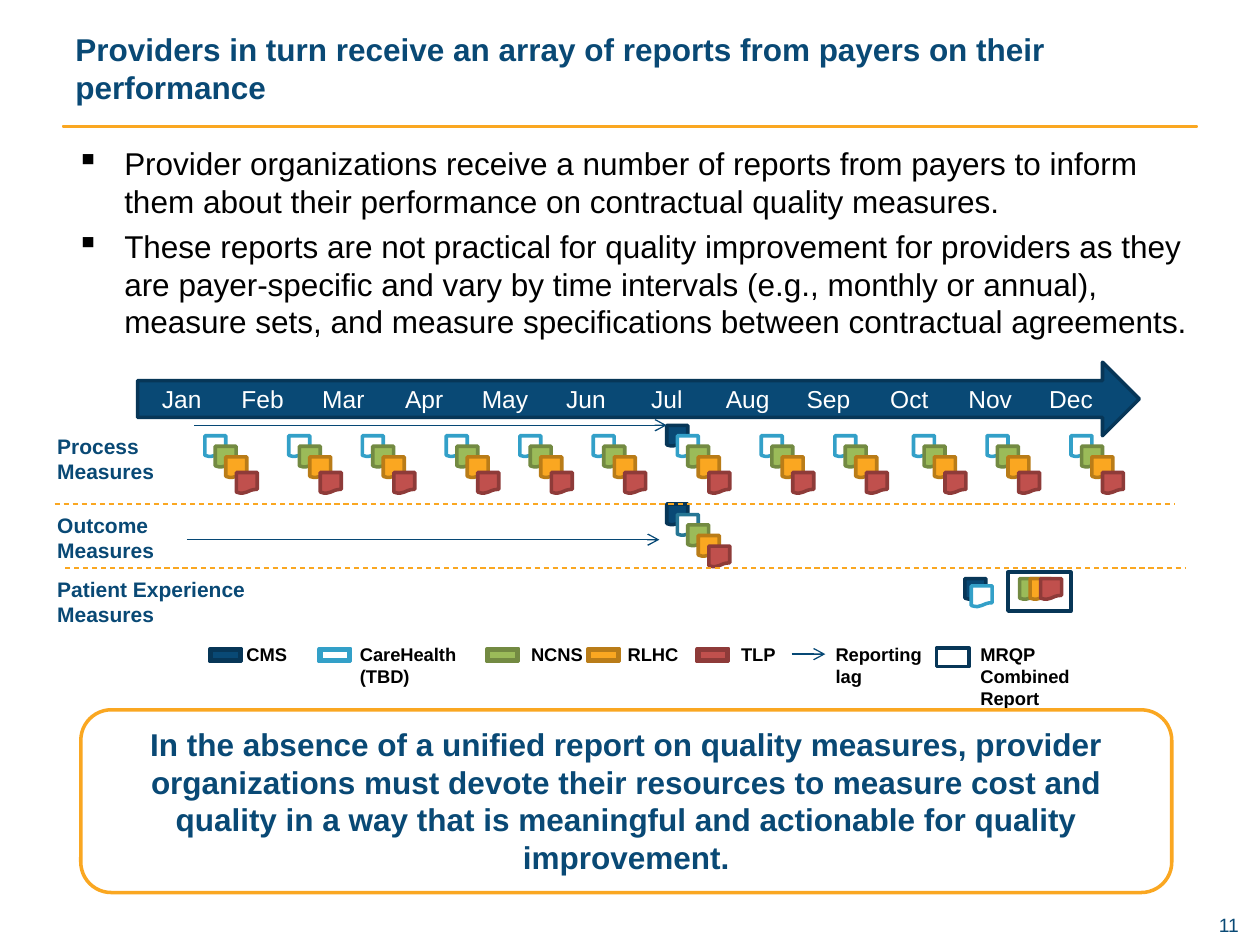
from dataclasses import dataclass

from lxml.etree import SubElement
from pptx import Presentation
from pptx.dml.color import RGBColor
from pptx.enum.dml import MSO_LINE
from pptx.enum.shapes import MSO_CONNECTOR, MSO_SHAPE as SHAPE
from pptx.enum.text import MSO_ANCHOR as ANCHOR, PP_ALIGN as ALIGN
from pptx.oxml.ns import qn
from pptx.util import Inches, Pt

CELL = Inches(1) // 12  # the slide is a grid of 120 columns and 90 rows
COLUMNS, ROWS = 120, 90

NAVY = RGBColor(0x09, 0x49, 0x75)
DARK_NAVY = RGBColor(0x07, 0x36, 0x57)
LAG_BLUE = RGBColor(0x06, 0x48, 0x75)
SKY = RGBColor(0x33, 0xA0, 0xC8)
DARK_SKY = RGBColor(0x26, 0x76, 0x94)
GREEN = RGBColor(0x9B, 0xBB, 0x59)
DARK_GREEN = RGBColor(0x73, 0x8A, 0x42)
AMBER = RGBColor(0xFA, 0xA7, 0x21)
DARK_AMBER = RGBColor(0xB9, 0x7C, 0x18)
RED = RGBColor(0xC0, 0x50, 0x4D)
DARK_RED = RGBColor(0x8E, 0x3B, 0x39)
WHITE = RGBColor(0xFF, 0xFF, 0xFF)
BLACK = RGBColor(0, 0, 0)

# Fill and outline of each payer's report
CMS = (NAVY, DARK_NAVY)
STATE = (WHITE, SKY)
STATE_OUTCOME = (WHITE, DARK_SKY)
BLUE_PLAN = (GREEN, DARK_GREEN)
CARE_PLAN = (AMBER, DARK_AMBER)
HEALTH_PLAN = (RED, DARK_RED)

MONTHS = "Jan Feb Mar Apr May Jun Jul Aug Sep Oct Nov Dec".split()
MONTHLY_REPORTS = [15.5, 23.5, 30.5, 38.5, 45.5, 52.5, 60.5, 68.5, 75.5, 83, 90, 98]


@dataclass
class Box:
    """An area in grid cells."""
    left: float
    top: float
    width: float
    height: float

    def inner(self, x, y, width, height):
        return Box(self.left + x, self.top + y, width, height)

    def emu(self):
        return [round(n * CELL) for n in (self.left, self.top, self.width, self.height)]


def write(shape, lines, size=18, color=NAVY, bold=False, align=ALIGN.LEFT,
          anchor=ANCHOR.TOP, inset=None, bullet=None, before=0, tabs=()):
    frame = shape.text_frame
    frame.word_wrap = True
    frame.vertical_anchor = anchor
    if inset is not None:
        frame.margin_left = frame.margin_right = inset
        frame.margin_top = frame.margin_bottom = inset
    for index, line in enumerate(lines):
        paragraph = frame.add_paragraph() if index else frame.paragraphs[0]
        props = paragraph._p.get_or_add_pPr()
        if bullet:
            props.set("marL", str(Inches(0.38)))
            props.set("indent", str(-Inches(0.38)))
            SubElement(props, qn("a:buChar")).set("char", bullet)
        if tabs:
            stops = SubElement(props, qn("a:tabLst"))
            for position in tabs:
                stop = SubElement(stops, qn("a:tab"))
                stop.set("pos", str(round(position * CELL)))
                stop.set("algn", "ctr")
        paragraph.alignment = align
        if index and before:
            paragraph.space_before = Pt(before)
        run = paragraph.add_run()
        run.text = line
        run.font.name, run.font.size = "Arial", Pt(size)
        run.font.bold, run.font.color.rgb = bold, color


def text(slide, box, *lines, **style):
    write(slide.shapes.add_textbox(*box.emu()), lines, **style)


def shape(slide, kind, box, fill=None, line=None, weight=2):
    item = slide.shapes.add_shape(kind, *box.emu())
    item.shadow.inherit = False
    if fill is None:
        item.fill.background()
    else:
        item.fill.solid()
        item.fill.fore_color.rgb = fill
    if line is None:
        item.line.fill.background()
    else:
        item.line.color.rgb = line
        item.line.width = Pt(weight)
    return item


def rule(slide, box, color, dashed=False, arrow=False):
    """Horizontal line along the top of the box."""
    left, top, width, _ = box.emu()
    line = slide.shapes.add_connector(MSO_CONNECTOR.STRAIGHT, left, top, left + width, top)
    line.line.color.rgb = color
    line.line.width = Pt(0.75)
    if dashed:
        line.line.dash_style = MSO_LINE.DASH
    if arrow:
        SubElement(line.line._get_or_add_ln(), qn("a:tailEnd")).set("type", "arrow")
    SubElement(line._element.spPr, qn("a:effectLst"))


def reports(slide, area, placed):
    for payer, x, y in placed:
        shape(slide, SHAPE.FLOWCHART_DOCUMENT, area.inner(x, y, 2, 2), *payer)


def row_label(slide, box, *lines):
    write(shape(slide, SHAPE.ROUNDED_RECTANGLE, box, WHITE), lines,
          size=12, bold=True, anchor=ANCHOR.MIDDLE)


def header(slide, area):
    text(slide, area.inner(0, 0, area.width, 9),
         "Providers in turn receive an array of reports from payers on their performance",
         bold=True, anchor=ANCHOR.MIDDLE)
    shape(slide, SHAPE.RECTANGLE, area.inner(0, 10, area.width, 0.12), AMBER, AMBER, 1)


def findings(slide, area):
    text(slide, area,
         "Provider organizations receive a number of reports from payers to inform them "
         "about their performance on contractual quality measures.",
         "These reports are not practical for quality improvement for providers as they are "
         "payer-specific and vary by time intervals (e.g., monthly or annual), measure sets, "
         "and measure specifications between contractual agreements.",
         color=BLACK, bullet="▪", before=4.3)


def month_arrow(slide, box):
    arrow = shape(slide, SHAPE.RIGHT_ARROW, box, NAVY, DARK_NAVY)
    write(arrow, ["".join("\t" + month for month in MONTHS)], size=14, color=WHITE,
          anchor=ANCHOR.MIDDLE, inset=0, tabs=[4.2 + 7.7 * i for i in range(len(MONTHS))])


def process_row(slide, area):
    row_label(slide, area.inner(0, 0.4, 14.5, 5.6), "Process Measures")
    reports(slide, area, [(CMS, 59.5, 0)])
    for x in MONTHLY_REPORTS:
        reports(slide, area, [(STATE, x, 1), (BLUE_PLAN, x + 1, 2),
                              (CARE_PLAN, x + 2, 3), (HEALTH_PLAN, x + 3, 4.5)])
    rule(slide, area.inner(14.5, 0, 45, 0), LAG_BLUE, arrow=True)


def outcome_row(slide, area):
    row_label(slide, area.inner(0, 0.4, 14.5, 5.6), "Outcome", "Measures")
    payers = [CMS, STATE_OUTCOME, BLUE_PLAN, CARE_PLAN, HEALTH_PLAN]
    reports(slide, area, [(payer, 59.5 + i, i) for i, payer in enumerate(payers)])
    rule(slide, area.inner(1.2, 0, 106.7, 0), AMBER, dashed=True)
    rule(slide, area.inner(13.8, 3.4, 45, 0), LAG_BLUE, arrow=True)


def experience_row(slide, area):
    row_label(slide, area.inner(0, 0.4, 22.4, 5.6), "Patient Experience", "Measures")
    rule(slide, area.inner(2.2, 0, 106.7, 0), AMBER, dashed=True)
    reports(slide, area, [(CMS, 87.9, 1), (STATE, 88.5, 1.7), (BLUE_PLAN, 93.1, 1),
                          (CARE_PLAN, 94.1, 1), (HEALTH_PLAN, 95.1, 1)])
    shape(slide, SHAPE.RECTANGLE, area.inner(92, 0.4, 6, 3.7), line=DARK_NAVY)


def legend(slide, area):
    keys = [(CMS, 0, 2.3, ["CMS"]), ((None, SKY), 10.4, 13.1, ["CareHealth", "(TBD)"]),
            (BLUE_PLAN, 26.4, 29.4, ["NCNS"]), (CARE_PLAN, 36, 38.6, ["RLHC"]),
            (HEALTH_PLAN, 46.4, 49.4, ["TLP"]), (None, 55.4, 58.4, ["Reporting", "lag"]),
            (None, 69.2, 72.2, ["MRQP Combined Report"])]
    for payer, swatch_x, label_x, lines in keys:
        if payer:
            shape(slide, SHAPE.BEVEL, area.inner(swatch_x, 1.1, 3, 1.2), *payer)
        text(slide, area.inner(label_x, 0, 13.2, area.height), *lines,
             size=10.5, color=BLACK, bold=True)
    rule(slide, area.inner(55.4, 1.6, 3.2, 0), LAG_BLUE, arrow=True)
    shape(slide, SHAPE.RECTANGLE, area.inner(69.2, 1, 3.1, 1.8), line=DARK_NAVY)


def conclusion(slide, area):
    write(shape(slide, SHAPE.ROUNDED_RECTANGLE, area, WHITE, AMBER),
          ["In the absence of a unified report on quality measures, provider organizations "
           "must devote their resources to measure cost and quality in a way that is "
           "meaningful and actionable for quality improvement."],
          bold=True, align=ALIGN.CENTER)


def main():
    deck = Presentation()
    deck.slide_width, deck.slide_height = COLUMNS * CELL, ROWS * CELL
    slide = deck.slides.add_slide(deck.slide_layouts[6])
    header(slide, Box(6, 2, 108, 10.12))
    findings(slide, Box(6.1, 13.1, 110.9, 20.2))
    process_row(slide, Box(4, 40.5, 109, 7.5))
    month_arrow(slide, Box(13.1, 34.5, 95.4, 7))
    outcome_row(slide, Box(4, 48, 109, 6.1))
    experience_row(slide, Box(4, 54.1, 109, 6))
    legend(slide, Box(20, 60.7, 86, 7))
    conclusion(slide, Box(7.7, 67.6, 103.9, 17.4))
    text(slide, Box(89, 87, 29, 2.3), "11", size=11, align=ALIGN.RIGHT, inset=0)
    deck.save("out.pptx")


if __name__ == "__main__":
    main()
